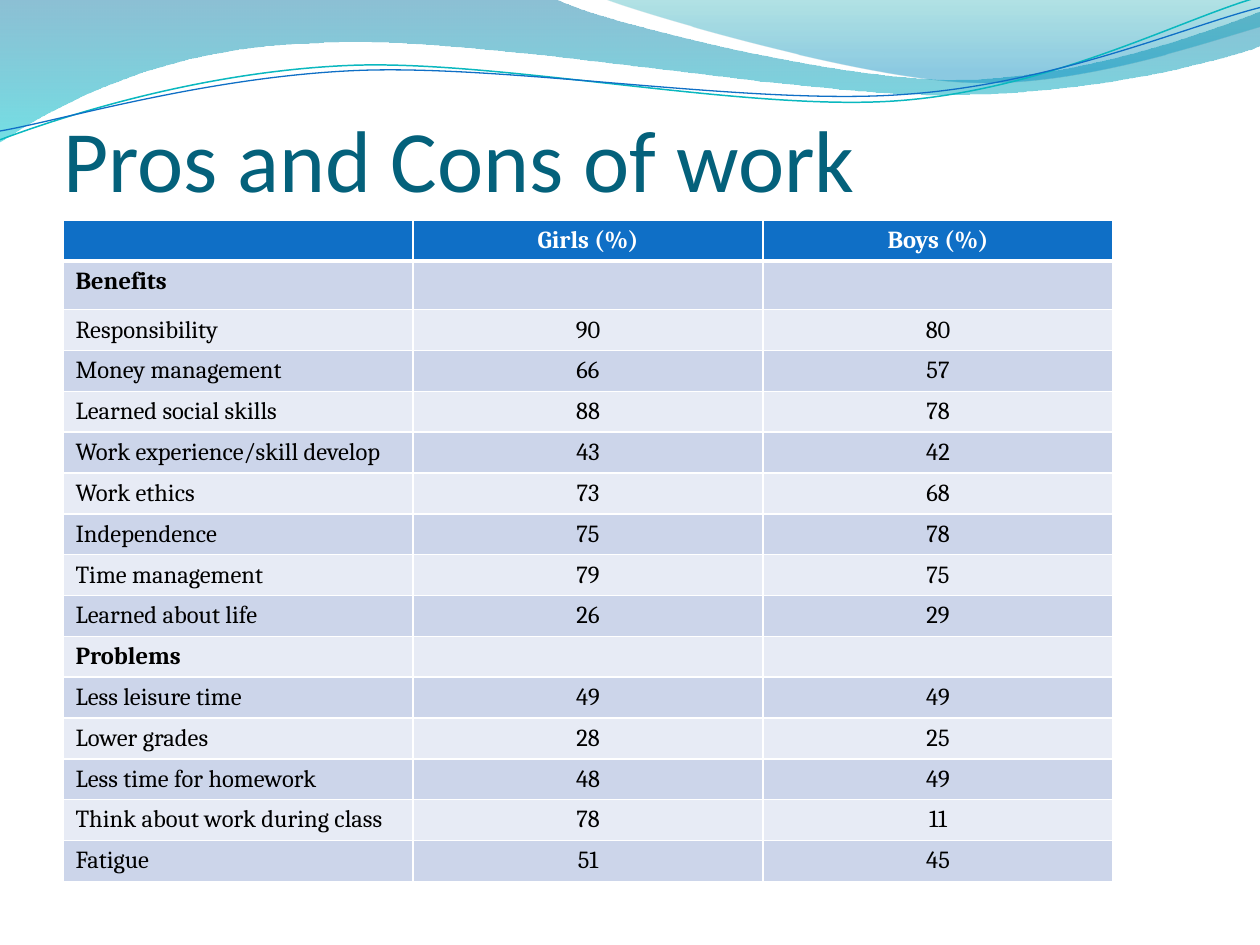
"""Build a slide with a wave banner and a table of the pros and cons of work."""
from lxml import etree
from pptx import Presentation
from pptx.dml.color import RGBColor
from pptx.enum.text import MSO_ANCHOR, MSO_AUTO_SIZE, PP_ALIGN
from pptx.oxml.ns import qn
from pptx.util import Cm, Pt

BOTTOM = MSO_ANCHOR.BOTTOM
FIXED = MSO_AUTO_SIZE.NONE
LEFT, CENTER = PP_ALIGN.LEFT, PP_ALIGN.CENTER
INCH = 2.54
THEME = {
    "title": "04617B", "head": "0F6FC6", "white": "FFFFFF", "ink": "000000",
    "bands": ("CCD5EA", "E7EBF5"), "teal": "0AB8BF", "blue": "0F6FC6",
    "deep": [(0, "0074A1", 45), (1, "00C6CF", 55)],
    "pale": [(0, "00A1A9", 30), (0.8, "008BBF", 45)],
    "big": 50, "small": 14, "sans": "Calibri", "serif": "Cambria",
}


def style(font, **values):
    color = values.pop("color")
    for name, value in values.items():
        setattr(font, name, value)
    font.color.rgb = RGBColor.from_string(color)


def draw(shapes, start, parts, closed):
    pen = shapes.build_freeform(*(Cm(n * INCH) for n in start))
    for part in parts:
        spots = [Cm(n * INCH) for n in part]
        pen.add_line_segments(zip(spots[::2], spots[1::2]), close=False)
    if closed:
        pen.add_line_segments([], close=True)
    wave = pen.convert_to_shape()
    wave.shadow.inherit = False
    sides = iter(wave._element.findall(".//" + qn("a:lnTo")))
    for part in parts:
        first = next(sides)
        if len(part) == 6:
            first.tag = qn("a:cubicBezTo")
            for side in (next(sides), next(sides)):
                first.append(side[0])
                side.getparent().remove(side)
    return wave


deck = Presentation()
deck.slide_width, deck.slide_height = Cm(25.4), Cm(19.05)
slide = deck.slides.add_slide(deck.slide_layouts[5])
shapes = slide.shapes

fills = [
    ("deep", (0, 0), [
        (4.4, -0.01), (4.76, 0.17, 6.64, 0.63, 7.58, 0.63),
        (8.53, 0.63, 9.58, 0.26, 10, 0.09), (10.01, 0.36),
        (9.83, 0.44, 8.7, 0.76, 7.46, 0.75), (6.22, 0.75, 3.82, 0.28, 2.57, 0.34),
        (1.29, 0.36, 0.46, 0.83, -0.01, 1.13), (0, 0)]),
    ("pale", (4.79, -0.01), [
        (5.09, 0.11, 6.82, 0.62, 7.69, 0.65),
        (8.56, 0.69, 9.61, 0.32, 10, 0.21), (10, 0), (4.79, -0.01)]),
]
for name, start, parts in fills:
    wave = draw(shapes, start, parts, True)
    wave.line.fill.background()
    wave.fill.gradient()
    wave.fill.gradient_angle = 270
    for stop, (place, color, alpha) in zip(wave.fill.gradient_stops, THEME[name]):
        stop.position = place
        stop.color.rgb = RGBColor.from_string(color)
    tones = wave._element.spPr.iter(qn("a:srgbClr"))
    for tone, (place, color, alpha) in zip(tones, THEME[name]):
        etree.SubElement(tone, qn("a:alpha")).set("val", str(alpha * 1000))

lines = [
    ("teal", 0.85, (0, 1.11), [
        (0.48, 0.93, 1.58, 0.57, 2.77, 0.52), (3.95, 0.47, 5.93, 0.89, 7.13, 0.8),
        (8.33, 0.71, 9.38, 0.15, 9.98, -0.02)]),
    ("blue", 0.75, (0, 1.04), [
        (0.47, 0.96, 1.64, 0.61, 2.83, 0.56), (4.03, 0.51, 5.97, 0.84, 7.17, 0.75),
        (8.36, 0.67, 9.41, 0.21, 10, 0.06)]),
]
for name, width, start, parts in lines:
    wave = draw(shapes, start, parts, False)
    wave.fill.background()
    wave.line.color.rgb = RGBColor.from_string(THEME[name])
    wave.line.width = Pt(width)

title = shapes.title
shapes._spTree.append(title._element)
place = {"left": Cm(1.27), "top": Cm(1.06), "width": Cm(22.86), "height": Cm(3.17)}
for name, value in place.items():
    setattr(title, name, value)
frame = title.text_frame
frame.text = "Pros and Cons of work"
look = {"auto_size": FIXED, "vertical_anchor": BOTTOM, "margin_left": 0,
        "margin_right": 0, "margin_top": Cm(0.13), "margin_bottom": 0}
for name, value in look.items():
    setattr(frame, name, value)
frame.paragraphs[0].alignment = LEFT
style(frame.paragraphs[0].runs[0].font, size=Pt(THEME["big"]),
      name=THEME["sans"], color=THEME["title"])

rows = [
    ("", "Girls (%)", "Boys (%)"),
    ("Benefits", "", ""),
    ("Responsibility", "90", "80"),
    ("Money management", "66", "57"),
    ("Learned social skills", "88", "78"),
    ("Work experience/skill develop", "43", "42"),
    ("Work ethics", "73", "68"),
    ("Independence", "75", "78"),
    ("Time management", "79", "75"),
    ("Learned about life", "26", "29"),
    ("Problems", "", ""),
    ("Less leisure time", "49", "49"),
    ("Lower grades", "28", "25"),
    ("Less time for homework", "48", "49"),
    ("Think about work during class", "78", "11"),
    ("Fatigue", "51", "45"),
]
high, tall = Cm(0.82), Cm(0.98)
table = shapes.add_table(len(rows), 3, Cm(1.27), Cm(4.44), Cm(21.17),
                         high * len(rows)).table
for r, row in enumerate(rows):
    table.rows[r].height = tall if row[0] == "Benefits" else high
    for c, text in enumerate(row):
        cell = table.cell(r, c)
        cell.fill.solid()
        shade = THEME["bands"][(r - 1) % 2] if r else THEME["head"]
        cell.fill.fore_color.rgb = RGBColor.from_string(shade)
        if r == 0:
            edge = etree.Element(qn("a:lnB"), w=str(Pt(3)))
            ink = etree.SubElement(edge, qn("a:solidFill"))
            etree.SubElement(ink, qn("a:srgbClr"), val=THEME["white"])
            cell._tc.get_or_add_tcPr().insert(0, edge)
        para = cell.text_frame.paragraphs[0]
        para.alignment = CENTER if c else LEFT
        if text:
            run = para.add_run()
            run.text = text
            style(run.font, size=Pt(THEME["small"]), name=THEME["serif"],
                  bold=r == 0 or not row[1],
                  color=THEME["ink"] if r else THEME["white"])
        else:
            end = etree.SubElement(para._p, qn("a:endParaRPr"))
            end.set("sz", str(THEME["small"] * 100))
            etree.SubElement(end, qn("a:latin"), typeface=THEME["serif"])

deck.save("out.pptx")
